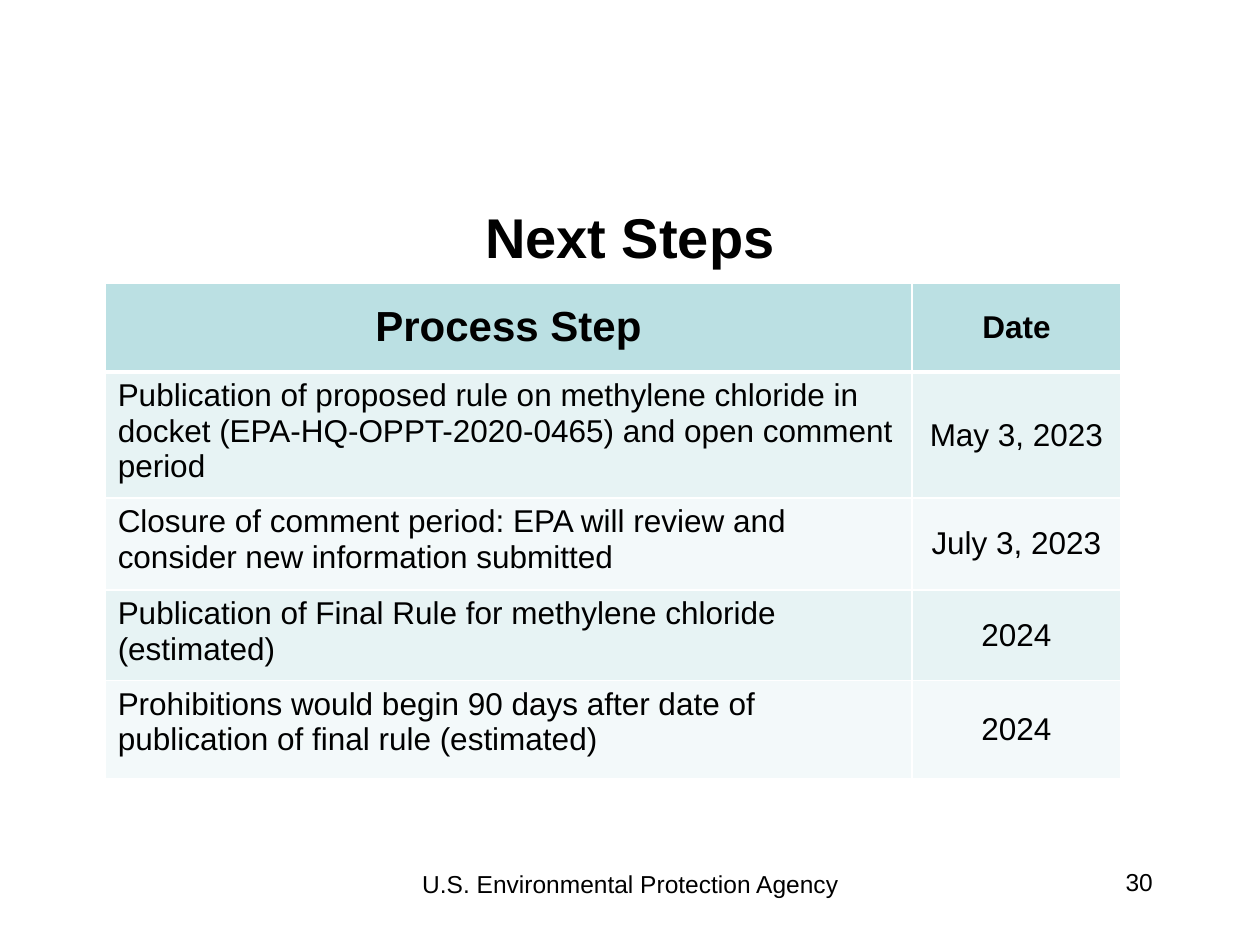
from pptx import Presentation
from pptx.dml.color import RGBColor
from pptx.enum.text import MSO_ANCHOR as Anchor, PP_ALIGN as Align
from pptx.oxml import parse_xml
from pptx.oxml.ns import nsdecls
from pptx.util import Cm, Pt

BASE = {"name": "Arial", "bold": False}
HEAD = ["Process Step", "Date"]
STEPS = [
    ("Publication of proposed rule on methylene chloride in docket "
     "(EPA-HQ-OPPT-2020-0465) and open comment period", "May 3, 2023"),
    ("Closure of comment period: EPA will review and consider new "
     "information submitted", "July 3, 2023"),
    ("Publication of Final Rule for methylene chloride (estimated)", "2024"),
    ("Prohibitions would begin 90 days after date of publication of "
     "final rule (estimated)", "2024"),
]
WIDTHS = [16.26, 4.22]
HEIGHTS = [1.8, 2.36, 1.85, 1.83, 1.98]
BANDS = ["E7F3F4", "F3F9FA"]


def color(code):
    return RGBColor.from_string(code)


def write(frame, text, align, **form):
    para = frame.paragraphs[0]
    para.alignment = align
    run = para.add_run()
    run.text = text
    for key, value in {**BASE, **form}.items():
        setattr(run.font, key, value)
    run.font.color.rgb = color("000000")
    return para


def add_title(slide, text):
    title = slide.shapes.title
    place = {"left": 2.12, "top": 3.38, "width": 21.16, "height": 2.74}
    for key, value in place.items():
        setattr(title, key, Cm(value))
    title.text_frame.vertical_anchor = Anchor.MIDDLE
    write(title.text_frame, text, Align.CENTER, size=Pt(32), bold=True)


def add_note(slide, text, left, width, align):
    box = slide.shapes.add_textbox(Cm(left), Cm(17.35), Cm(width), Cm(1.27))
    box.text_frame.word_wrap = True
    return write(box.text_frame, text, align, size=Pt(14))


def add_lines(cell, base):
    props = cell._tc.get_or_add_tcPr()
    for side, width in zip("LRTB", (1, 1, 1, base)):
        props.append(parse_xml(
            f'<a:ln{side} {nsdecls("a")} w="{Pt(width)}"><a:solidFill>'
            f'<a:srgbClr val="FFFFFF"/></a:solidFill></a:ln{side}>'))


def fill_cell(cell, text, fill, base, align, anchor, **form):
    add_lines(cell, base)
    cell.fill.solid()
    cell.fill.fore_color.rgb = color(fill)
    cell.vertical_anchor = anchor
    write(cell.text_frame, text, align, **form)


def add_steps(slide):
    table = slide.shapes.add_table(
        len(HEIGHTS), len(WIDTHS), Cm(2.12), Cm(5.7),
        Cm(sum(WIDTHS)), Cm(sum(HEIGHTS))).table
    for col, width in zip(table.columns, WIDTHS):
        col.width = Cm(width)
    for row, height in zip(table.rows, HEIGHTS):
        row.height = Cm(height)
    mid = (Align.CENTER, Anchor.MIDDLE)
    for col, (text, size) in enumerate(zip(HEAD, (24, 18))):
        fill_cell(table.cell(0, col), text, "BBE0E3", 3, *mid,
                  size=Pt(size), bold=True)
    for row, (step, date) in enumerate(STEPS, 1):
        fill = BANDS[(row - 1) % 2]
        fill_cell(table.cell(row, 0), step, fill, 1, Align.LEFT, Anchor.TOP,
                  size=Pt(18))
        fill_cell(table.cell(row, 1), date, fill, 1, *mid, size=Pt(18))


def main():
    deck = Presentation()
    deck.slide_width, deck.slide_height = Cm(25.4), Cm(19.05)
    slide = deck.slides.add_slide(deck.slide_layouts[5])
    add_title(slide, "Next Steps")
    note = add_note(slide, "U.S. Environmental Protection Agency",
                    3.63, 18.16, Align.CENTER)
    note.line_spacing = Pt(17.9)
    add_note(slide, "30", 18.21, 5.28, Align.RIGHT)
    add_steps(slide)
    deck.save("out.pptx")


if __name__ == "__main__":
    main()
